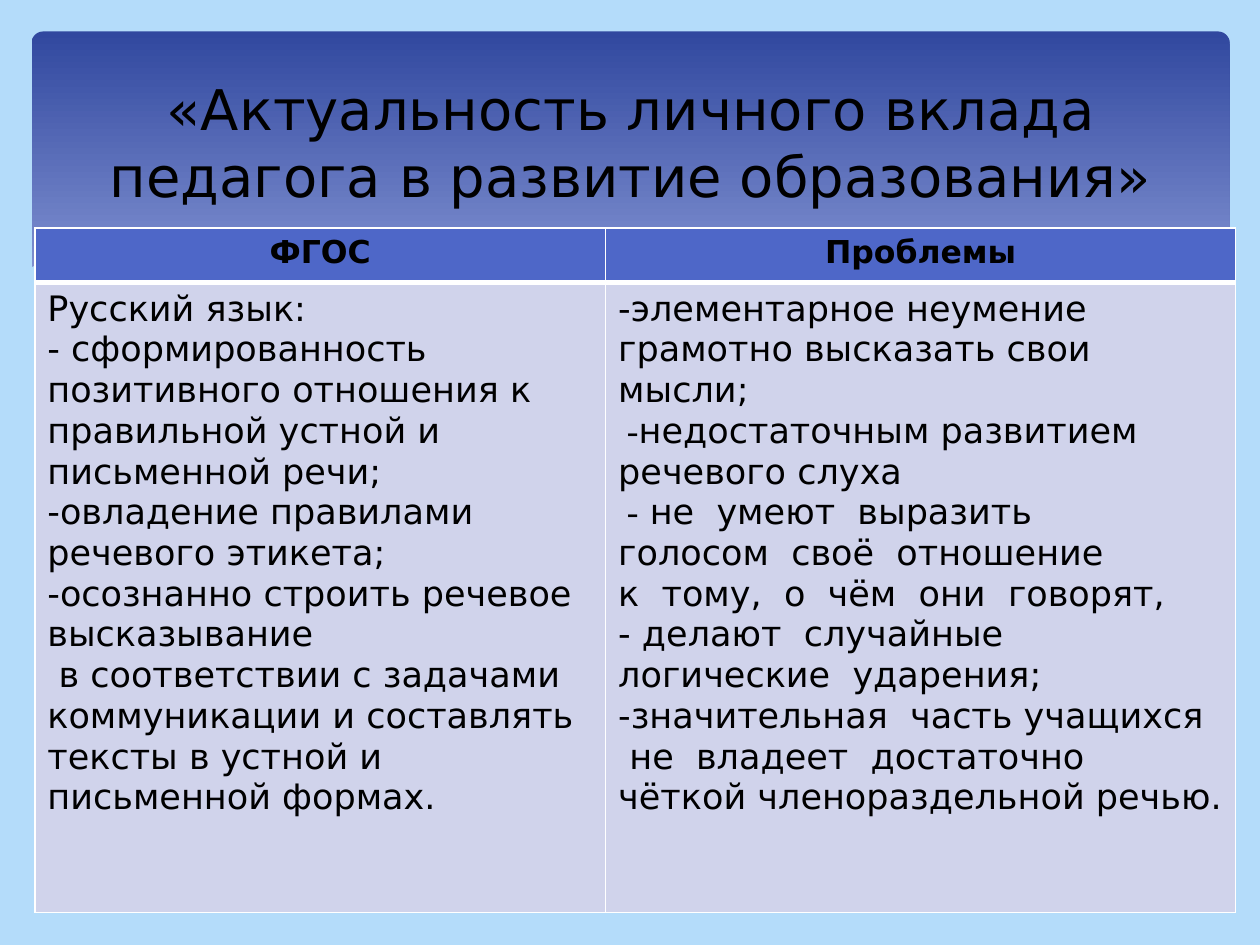
import lxml.etree
import pptx
import pptx.dml.color
import pptx.enum.shapes
import pptx.enum.text
import pptx.oxml.ns
import pptx.util

Pt = pptx.util.Pt
RGBColor = pptx.dml.color.RGBColor
qn = pptx.oxml.ns.qn
ALIGN = pptx.enum.text.PP_ALIGN
ANCHOR = pptx.enum.text.MSO_ANCHOR

SKY = RGBColor(0xB4, 0xDC, 0xFA)
NAVY = RGBColor(0x31, 0x48, 0x9F)
PERIWINKLE = RGBColor(0x95, 0xA4, 0xDE)
BLUE = RGBColor(0x4E, 0x67, 0xC8)
LAVENDER = RGBColor(0xD0, 0xD3, 0xEB)
WHITE = RGBColor(0xFF, 0xFF, 0xFF)
BLACK = RGBColor(0, 0, 0)


def add_text(paragraph, text, size=20, bold=False, font="DejaVu Sans", align=ALIGN.LEFT):
    paragraph.alignment = align
    run = paragraph.add_run()
    run.text = text
    run.font.size = Pt(size)
    run.font.bold = bold
    run.font.name = font
    run.font.color.rgb = BLACK


def set_border(cell, side, width):
    line = lxml.etree.SubElement(cell._tc.get_or_add_tcPr(), qn(f"a:{side}"), w=str(Pt(width)))
    fill = lxml.etree.SubElement(line, qn("a:solidFill"))
    lxml.etree.SubElement(fill, qn("a:srgbClr"), val=str(WHITE))


presentation = pptx.Presentation()
presentation.slide_width = Pt(720)
presentation.slide_height = Pt(540)
slide = presentation.slides.add_slide(presentation.slide_layouts[6])
slide.background.fill.solid()
slide.background.fill.fore_color.rgb = SKY

banner = slide.shapes.add_shape(
    pptx.enum.shapes.MSO_SHAPE.ROUNDED_RECTANGLE, Pt(18), Pt(18), Pt(684.7), Pt(194.4))
banner.adjustments[0] = 0.034
banner.shadow.inherit = False
banner.line.fill.background()
banner.fill.gradient()
banner.fill.gradient_angle = 270
for stop, color, position in zip(banner.fill.gradient_stops, (NAVY, PERIWINKLE), (0, 0.9)):
    stop.color.rgb = color
    stop.position = position

WAVES = [
    (29, [(975, 200), (935, 207), (891, 216), (832, 230), (753, 248), (661, 265),
          (705, 271), (757, 276), (803, 278), (854, 276), (897, 270), (935, 262),
          (976, 247), (976, 200)]),
    (40, [(893, 273), (837, 265), (741, 247), (629, 222), (569, 208), (514, 198),
          (442, 189), (380, 185), (328, 187), (286, 191), (342, 199), (404, 211),
          (491, 232), (566, 248), (634, 261), (695, 270), (748, 276), (807, 278),
          (857, 277), (893, 273)]),
    (None, [(309, 195), (344, 190), (401, 187), (469, 189), (533, 194), (608, 204),
            (695, 219), (760, 233), (831, 251), (907, 272)]),
    (None, [(613, 257), (672, 241), (748, 223), (836, 204), (895, 194), (938, 188),
            (975, 185)]),
    (100, [(977, 246), (940, 259), (899, 269), (850, 275), (809, 277), (744, 274),
           (688, 268), (626, 258), (555, 245), (475, 227), (391, 207), (340, 197),
           (292, 190), (250, 186), (193, 184), (146, 185), (106, 189), (76, 195),
           (46, 203), (23, 213), (23, 329), (977, 329)]),
]
for opacity, points in WAVES:
    builder = slide.shapes.build_freeform(*points[0], scale=Pt(0.72))
    builder.add_line_segments(points[1:], close=opacity is not None)
    wave = builder.convert_to_shape()
    wave.shadow.inherit = False
    if opacity is None:
        wave.fill.background()
        wave.line.color.rgb = WHITE
        wave.line.width = Pt(0)
        continue
    wave.line.fill.background()
    wave.fill.solid()
    wave.fill.fore_color.rgb = SKY
    if opacity < 100:
        color_element = wave._element.spPr.find(qn("a:solidFill"))[0]
        lxml.etree.SubElement(color_element, qn("a:alpha"), val=str(opacity * 1000))

title = slide.shapes.add_textbox(Pt(36.7), Pt(31.7), Pt(648), Pt(98.6))
title.text_frame.word_wrap = True
title.text_frame.vertical_anchor = ANCHOR.MIDDLE
add_text(title.text_frame.paragraphs[0],
         "«Актуальность личного вклада педагога в развитие образования»",
         size=32, align=ALIGN.CENTER)

HEADERS = ["ФГОС", "Проблемы"]
BODIES = [
    [
        "Русский язык:",
        "- сформированность позитивного отношения к правильной устной и письменной речи;",
        "-овладение правилами речевого этикета;",
        "-осознанно строить речевое высказывание",
        " в соответствии с задачами коммуникации и составлять тексты в устной и письменной формах.",
    ],
    [
        "-элементарное неумение грамотно высказать свои мысли;",
        " -недостаточным развитием речевого слуха ",
        " - не  умеют  выразить",
        "голосом  своё  отношение  ",
        "к  тому,  о  чём  они  говорят,",
        "- делают  случайные",
        "логические  ударения;",
        "-значительная  часть учащихся   не  владеет  достаточно  чёткой членораздельной речью.",
    ],
]
SERIF_DASH = " -"

table = slide.shapes.add_table(2, 2, Pt(19.9), Pt(130.3), Pt(686.2), Pt(391)).table
for column, width in zip(table.columns, (326.2, 360)):
    column.width = Pt(width)
for row, height in zip(table.rows, (31, 360)):
    row.height = Pt(height)

for column_index, (header, body) in enumerate(zip(HEADERS, BODIES)):
    header_cell = table.cell(0, column_index)
    body_cell = table.cell(1, column_index)
    for cell, color, top, bottom in ((header_cell, BLUE, 1, 3), (body_cell, LAVENDER, 3, 1)):
        for side, width in (("lnL", 1), ("lnR", 1), ("lnT", top), ("lnB", bottom)):
            set_border(cell, side, width)
        cell.fill.solid()
        cell.fill.fore_color.rgb = color

    add_text(header_cell.text_frame.paragraphs[0], header, size=18, bold=True, align=ALIGN.CENTER)
    frame = body_cell.text_frame
    for index, text in enumerate(body):
        paragraph = frame.add_paragraph() if index else frame.paragraphs[0]
        if text.startswith(SERIF_DASH):
            add_text(paragraph, SERIF_DASH, font="Times New Roman")
            text = text.removeprefix(SERIF_DASH)
        add_text(paragraph, text)

presentation.save("out.pptx")
